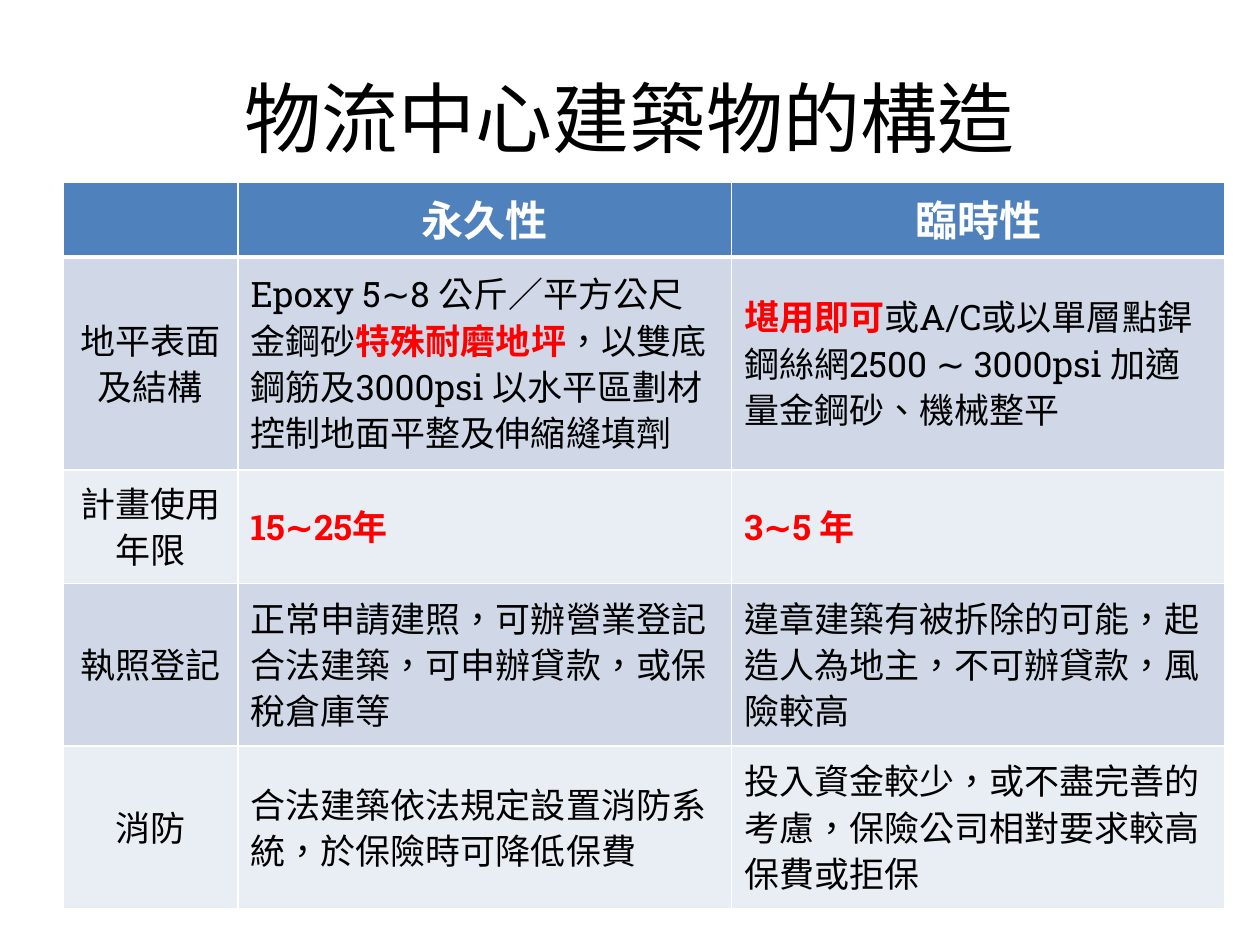
import lxml.etree
import pptx
import pptx.dml.color
import pptx.enum.text
import pptx.oxml.ns
import pptx.util
from dataclasses import dataclass

Pt = pptx.util.Pt
RGB = pptx.dml.color.RGBColor.from_string
qn = pptx.oxml.ns.qn
ALIGN = pptx.enum.text.PP_ALIGN
MIDDLE = pptx.enum.text.MSO_ANCHOR.MIDDLE


@dataclass(frozen=True)
class Theme:
    font: str = "Roboto Slab"
    ink: str = "000000"
    accent: str = "FF0000"
    paper: str = "FFFFFF"
    header: str = "4F81BD"
    bands: tuple = ("D0D8E8", "E9EDF4")
    title_size: int = 44
    header_size: int = 24
    body_size: int = 20
    rule: int = 1
    header_rule: int = 3


class Deck:
    def __init__(self, theme):
        self.theme = theme
        self.presentation = pptx.Presentation()
        self.presentation.slide_width = Pt(720)
        self.presentation.slide_height = Pt(540)
        self.slide = self.presentation.slides.add_slide(self.presentation.slide_layouts[6])

    def add_text(self, paragraph, wording, size, color, bold=False):
        run = paragraph.add_run()
        run.text = wording
        run.font.name = self.theme.font
        run.font.size = Pt(size)
        run.font.bold = bold
        run.font.color.rgb = RGB(color)
        properties = run._r.get_or_add_rPr()
        properties.set("lang", "zh-TW")
        lxml.etree.SubElement(properties, qn("a:ea"), typeface=self.theme.font)

    def title(self, wording, left, top, width, height):
        frame = self.slide.shapes.add_textbox(Pt(left), Pt(top), Pt(width), Pt(height)).text_frame
        frame.word_wrap = True
        frame.vertical_anchor = MIDDLE
        heading = frame.paragraphs[0]
        heading.alignment = ALIGN.CENTER
        self.add_text(heading, wording, self.theme.title_size, self.theme.ink)

    def border(self, cell, side, weight):
        line = lxml.etree.SubElement(
            cell._tc.get_or_add_tcPr(), qn(f"a:ln{side}"), w=str(Pt(weight)))
        fill = lxml.etree.SubElement(line, qn("a:solidFill"))
        lxml.etree.SubElement(fill, qn("a:srgbClr"), val=self.theme.paper)

    def cell(self, cell, row, column, pieces):
        theme = self.theme
        is_header = row == 0
        weights = {
            "L": theme.rule,
            "R": theme.rule,
            "T": theme.header_rule if row == 1 else theme.rule,
            "B": theme.header_rule if is_header else theme.rule,
        }
        for side, weight in weights.items():
            self.border(cell, side, weight)
        cell.fill.solid()
        cell.fill.fore_color.rgb = RGB(theme.header if is_header else theme.bands[(row - 1) % 2])
        cell.vertical_anchor = MIDDLE
        paragraph = cell.text_frame.paragraphs[0]
        paragraph.alignment = ALIGN.CENTER if is_header or column == 0 else ALIGN.LEFT
        for wording, stressed in pieces:
            if is_header:
                self.add_text(paragraph, wording, theme.header_size, theme.paper, True)
            else:
                color = theme.accent if stressed else theme.ink
                self.add_text(paragraph, wording, theme.body_size, color, stressed)

    def table(self, rows, left, top, widths, heights):
        table = self.slide.shapes.add_table(
            len(rows), len(widths), Pt(left), Pt(top), Pt(sum(widths)), Pt(sum(heights))).table
        for column, width in zip(table.columns, widths):
            column.width = Pt(width)
        for line, height in zip(table.rows, heights):
            line.height = Pt(height)
        for row, entries in enumerate(rows):
            for column, pieces in enumerate(entries):
                self.cell(table.cell(row, column), row, column, pieces)


def plain(wording):
    return (wording, False)


def stress(wording):
    return (wording, True)


COMPARISON = [
    [[], [plain("永久性")], [plain("臨時性")]],
    [
        [plain("地平表面及結構")],
        [
            plain("Epoxy 5∼8 公斤／平方公尺金鋼砂"),
            stress("特殊耐磨地坪"),
            plain("，以雙底鋼筋及3000psi 以水平區劃材控制地面平整及伸縮縫填劑"),
        ],
        [
            stress("堪用即可"),
            plain("或A/C或以單層點銲鋼絲網2500 ∼ 3000psi 加適量金鋼砂、機械整平"),
        ],
    ],
    [[plain("計畫使用年限")], [stress("15∼25年")], [stress("3∼5 年")]],
    [
        [plain("執照登記")],
        [plain("正常申請建照，可辦營業登記合法建築，可申辦貸款，或保稅倉庫等")],
        [plain("違章建築有被拆除的可能，起造人為地主，不可辦貸款，風險較高")],
    ],
    [
        [plain("消防")],
        [plain("合法建築依法規定設置消防系統，於保險時可降低保費")],
        [plain("投入資金較少，或不盡完善的考慮，保險公司相對要求較高保費或拒保")],
    ],
]


def main():
    deck = Deck(Theme())
    deck.title("物流中心建築物的構造", 36, 21.6, 648, 90)
    deck.table(COMPARISON, 36, 104.4, [100, 282, 282], [42.5, 121.7, 64.8, 93, 93])
    deck.presentation.save("out.pptx")


if __name__ == "__main__":
    main()
